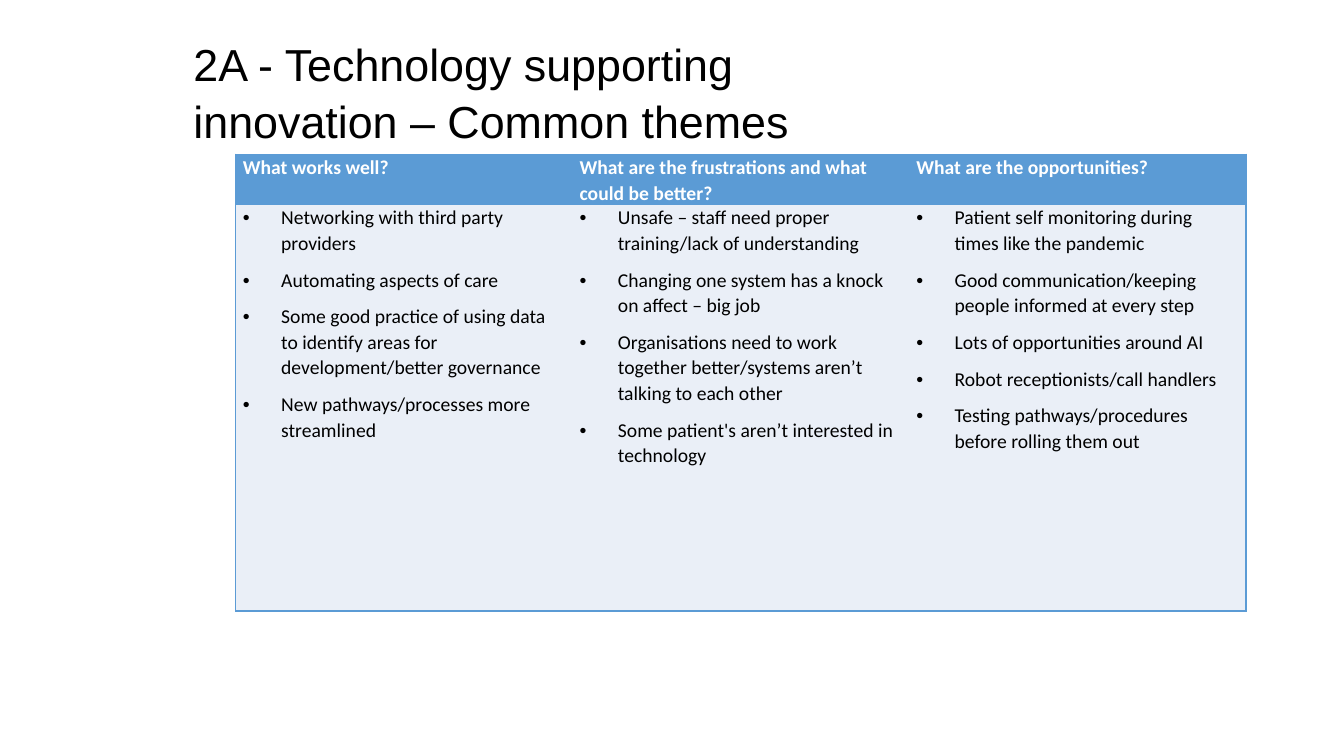
import lxml.etree
import pptx
import pptx.dml.color
import pptx.oxml.ns
import pptx.util

BLACK = pptx.dml.color.RGBColor(0x00, 0x00, 0x00)
WHITE = pptx.dml.color.RGBColor(0xFF, 0xFF, 0xFF)
BLUE = pptx.dml.color.RGBColor(0x5B, 0x9B, 0xD5)
PALE_BLUE = pptx.dml.color.RGBColor(0xEA, 0xEF, 0xF7)

TITLE = "2A - Technology supporting innovation – Common themes"
THEMES = {
    "What works well?": [
        "Networking with third party providers",
        "Automating aspects of care",
        "Some good practice of using data to identify areas for development/better governance",
        "New pathways/processes more streamlined",
    ],
    "What are the frustrations and what could be better?": [
        "Unsafe – staff need proper training/lack of understanding",
        "Changing one system has a knock on affect – big job",
        "Organisations need to work together better/systems aren’t talking to each other",
        "Some patient's aren’t interested in technology",
    ],
    "What are the opportunities?": [
        "Patient self monitoring during times like the pandemic",
        "Good communication/keeping people informed at every step",
        "Lots of opportunities around AI",
        "Robot receptionists/call handlers",
        "Testing pathways/procedures before rolling them out",
    ],
}


def add_element(parent, tag, **attributes):
    values = {name: str(value) for name, value in attributes.items()}
    return lxml.etree.SubElement(parent, pptx.oxml.ns.qn(tag), values)


class ThemeSlide:
    title_font = "Arial"
    table_font = "Calibri"
    title_size = pptx.util.Pt(32)
    table_size = pptx.util.Pt(14)
    indent = pptx.util.Inches(0.38)
    tab = pptx.util.Inches(0.5)
    border = pptx.util.Pt(1)

    def __init__(self, presentation):
        self.width = presentation.slide_width
        self.height = presentation.slide_height
        self.slide = presentation.slides.add_slide(presentation.slide_layouts[6])

    def place(self, left, top, width, height):
        return (round(left * self.width), round(top * self.height),
                round(width * self.width), round(height * self.height))

    def format_runs(self, paragraph, font, size, color, bold=False):
        for run in paragraph.runs:
            run.font.name = font
            run.font.size = size
            run.font.bold = bold
            run.font.color.rgb = color

    def title(self, text, *shares):
        frame = self.slide.shapes.add_textbox(*self.place(*shares)).text_frame
        frame.word_wrap = True
        frame.text = text
        frame.paragraphs[0].line_spacing = 1.05
        self.format_runs(frame.paragraphs[0], self.title_font, self.title_size, BLACK)

    def bullet(self, paragraph):
        properties = paragraph._p.get_or_add_pPr()
        properties.set("marL", str(self.indent))
        properties.set("indent", str(-self.indent))
        add_element(properties, "a:buFont", typeface="Arial")
        add_element(properties, "a:buChar", char="•")
        add_element(add_element(properties, "a:tabLst"), "a:tab", pos=self.tab, algn="l")

    def borders(self, cell, drawn_sides):
        properties = cell._tc.get_or_add_tcPr()
        for side in "LRTB":
            line = add_element(properties, f"a:ln{side}", w=self.border)
            if side in drawn_sides:
                add_element(add_element(line, "a:solidFill"), "a:srgbClr", val=BLUE)
            else:
                add_element(line, "a:noFill")

    def cell(self, cell, lines, sides, fill, color, heading):
        self.borders(cell, sides)
        cell.fill.solid()
        cell.fill.fore_color.rgb = fill
        cell.margin_left = cell.margin_right = pptx.util.Inches(0.07)
        cell.margin_top = cell.margin_bottom = 0
        cell.text_frame.text = "\n".join(lines)
        for paragraph in cell.text_frame.paragraphs:
            if not heading:
                self.bullet(paragraph)
            paragraph.line_spacing = 1.07
            paragraph.space_after = pptx.util.Pt(8)
            self.format_runs(paragraph, self.table_font, self.table_size, color, heading)

    def theme_table(self, themes, heading_share, *shares):
        left, top, width, height = self.place(*shares)
        table = self.slide.shapes.add_table(2, len(themes), left, top, width, height).table
        table.rows[0].height = round(height * heading_share)
        table.rows[1].height = height - table.rows[0].height
        last = len(themes) - 1
        for column, (heading, points) in enumerate(themes.items()):
            sides = "TB" + ("L" if column == 0 else "") + ("R" if column == last else "")
            self.cell(table.cell(0, column), [heading], sides, BLUE, WHITE, True)
            self.cell(table.cell(1, column), points, sides, PALE_BLUE, BLACK, False)


def main():
    presentation = pptx.Presentation()
    presentation.slide_width = pptx.util.Inches(13.33)
    presentation.slide_height = pptx.util.Inches(7.5)
    themes = ThemeSlide(presentation)
    themes.title(TITLE, 0.1365, 0.0387, 0.5, 0.1573)
    themes.theme_table(THEMES, 0.1, 0.1755, 0.204, 0.7517, 0.5973)
    presentation.save("out.pptx")


if __name__ == "__main__":
    main()
